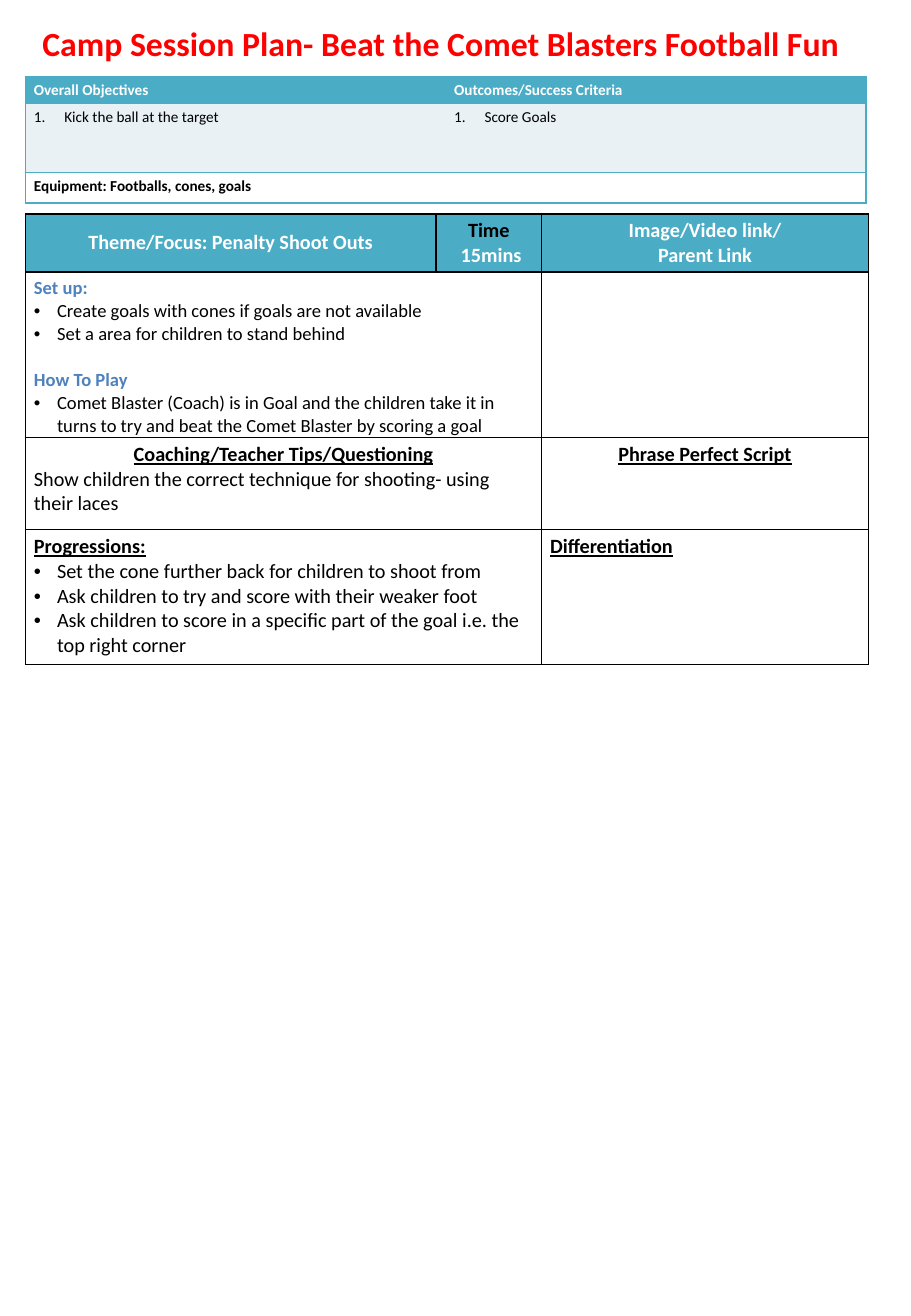
from dataclasses import dataclass

import pptx
import pptx.dml.color
import pptx.enum.text
import pptx.oxml
import pptx.oxml.ns
import pptx.util

Inches = pptx.util.Inches
Pt = pptx.util.Pt
RGBColor = pptx.dml.color.RGBColor
Align = pptx.enum.text.PP_ALIGN
Anchor = pptx.enum.text.MSO_ANCHOR

RED = RGBColor(0xFF, 0x00, 0x00)
TEAL = RGBColor(0x4B, 0xAC, 0xC6)
PALE = RGBColor(0xE9, 0xF1, 0xF5)
BLUE = RGBColor(0x4F, 0x81, 0xBD)
WHITE = RGBColor(0xFF, 0xFF, 0xFF)
BLACK = RGBColor(0x00, 0x00, 0x00)
FONT = "Calibri"
BULLET = ('<a:buFont {} typeface="Arial"/>', '<a:buChar {} char="•"/>')
NUMBER = ('<a:buAutoNum {} type="arabicPeriod"/>',)
NAMESPACE = pptx.oxml.ns.nsdecls("a")


@dataclass
class Line:
    text: str
    size: int
    color: RGBColor = BLACK
    bold: bool = False
    underline: bool = False
    centered: bool = False
    marker: tuple[str, ...] = ()
    indent: float = 0
    space_before: float = 0


@dataclass
class Cell:
    row: int
    column: int
    lines: list[Line]
    fill: RGBColor = WHITE
    sides: str = "LRTB"
    span: int = 1
    middle: bool = False


@dataclass
class Grid:
    left: float
    top: float
    columns: list[float]
    rows: list[float]
    border: RGBColor
    cells: list[Cell]


def heading(text: str, centered: bool = False) -> Line:
    return Line(text, 12, bold=True, underline=True, centered=centered)


def subheading(text: str, space_before: float = 0) -> Line:
    return Line(text, 11, BLUE, bold=True, space_before=space_before)


def banner(text: str, color: RGBColor = WHITE) -> Line:
    return Line(text, 12, color, bold=True, centered=True)


def bullet(text: str, size: int) -> Line:
    return Line(text, size, marker=BULLET, indent=0.19)


def write_lines(frame, lines: list[Line]) -> None:
    for index, line in enumerate(lines):
        para = frame.paragraphs[0] if index == 0 else frame.add_paragraph()
        para.alignment = Align.CENTER if line.centered else Align.LEFT
        para.space_before = Pt(line.space_before)
        if line.marker:
            properties = para._p.get_or_add_pPr()
            properties.set("marL", str(Inches(line.indent)))
            properties.set("indent", str(-Inches(line.indent)))
            for element in line.marker:
                properties.append(pptx.oxml.parse_xml(element.format(NAMESPACE)))
        span = para.add_run()
        span.text = line.text
        span.font.name = FONT
        span.font.size = Pt(line.size)
        span.font.bold = line.bold
        span.font.underline = line.underline
        span.font.color.rgb = line.color


def draw_borders(cell, sides: str, color: RGBColor) -> None:
    properties = cell._tc.get_or_add_tcPr()
    for side in "LRTB":
        paint = "<a:noFill/>"
        if side in sides:
            paint = f'<a:solidFill><a:srgbClr val="{color}"/></a:solidFill>'
        properties.append(pptx.oxml.parse_xml(
            f'<a:ln{side} {NAMESPACE} w="{Pt(1)}">{paint}</a:ln{side}>'))


def draw_grid(page, grid: Grid) -> None:
    table = page.shapes.add_table(
        len(grid.rows), len(grid.columns), Inches(grid.left), Inches(grid.top),
        Inches(sum(grid.columns)), Inches(sum(grid.rows))).table
    table.first_row = False
    table.horz_banding = False
    for column, width in zip(table.columns, grid.columns):
        column.width = Inches(width)
    for row, height in zip(table.rows, grid.rows):
        row.height = Inches(height)
    for item in grid.cells:
        cell = table.cell(item.row, item.column)
        last = item.column + item.span - 1
        if item.span > 1:
            cell.merge(table.cell(item.row, last))
        for column in range(item.column, last + 1):
            part = table.cell(item.row, column)
            draw_borders(part, item.sides, grid.border)
            part.fill.solid()
            part.fill.fore_color.rgb = item.fill
        cell.margin_left = cell.margin_right = Inches(0.07)
        cell.margin_top = Inches(0.04)
        cell.margin_bottom = Inches(0.04 if item.middle else 0.01)
        cell.vertical_anchor = Anchor.MIDDLE if item.middle else Anchor.TOP
        write_lines(cell.text_frame, item.lines)


SESSION = Grid(0.21, 1.76, [3.38, 0.87, 2.69], [0.48, 1.36, 0.76, 1.11], BLACK, [
    Cell(0, 0, [banner("Theme/Focus: Penalty Shoot Outs")], TEAL, middle=True),
    Cell(0, 1, [banner("Time", BLACK), banner(" 15mins")], TEAL, middle=True),
    Cell(0, 2, [banner("Image/Video link/"), banner("Parent Link")], TEAL, middle=True),
    Cell(1, 0, [
        subheading("Set up:"),
        bullet("Create goals with cones if goals are not available", 11),
        bullet("Set a area for children to stand behind", 11),
        subheading("How To Play", space_before=13.4),
        bullet("Comet Blaster (Coach) is in Goal and the children take it in "
               "turns to try and beat the Comet Blaster by scoring a goal", 11),
    ], span=2),
    Cell(1, 2, []),
    Cell(2, 0, [
        heading("Coaching/Teacher Tips/Questioning", centered=True),
        Line("Show children the correct technique for shooting- using their laces", 12),
    ], span=2),
    Cell(2, 2, [heading("Phrase Perfect Script", centered=True)]),
    Cell(3, 0, [
        heading("Progressions:"),
        bullet("Set the cone further back for children to shoot from", 12),
        bullet("Ask children to try and score with their weaker foot", 12),
        bullet("Ask children to score in a specific part of the goal i.e. the "
               "top right corner", 12),
    ], span=2),
    Cell(3, 2, [heading("Differentiation")]),
])

# Each objective sits beside the outcome that shows it was met
GOALS = [("Overall Objectives", "Kick the ball at the target", "LTB"),
         ("Outcomes/Success Criteria", "Score Goals", "RTB")]
OBJECTIVES = Grid(0.21, 0.63, [3.46, 3.46], [0.22, 0.57, 0.25], TEAL, [
    cell for column, (title, goal, sides) in enumerate(GOALS) for cell in (
        Cell(0, column, [Line(title, 9, WHITE, bold=True)], TEAL, sides),
        Cell(1, column, [Line(goal, 9, marker=NUMBER, indent=0.25)], PALE, sides))
] + [Cell(2, 0, [Line("Equipment: Footballs, cones, goals", 9, bold=True)], span=2)])


def main() -> None:
    deck = pptx.Presentation()
    deck.slide_width = Inches(7.5)
    deck.slide_height = Inches(10.83)
    page = deck.slides.add_slide(deck.slide_layouts[6])

    # Title
    box = page.shapes.add_textbox(Inches(0.17), Inches(0.14), Inches(6.92), Inches(0.44))
    box.text_frame.word_wrap = True
    write_lines(box.text_frame, [
        Line("Camp Session Plan- Beat the Comet Blasters Football Fun", 20, RED,
             bold=True, centered=True)])

    # Session details and objectives
    for grid in (SESSION, OBJECTIVES):
        draw_grid(page, grid)

    deck.save("out.pptx")


if __name__ == "__main__":
    main()
